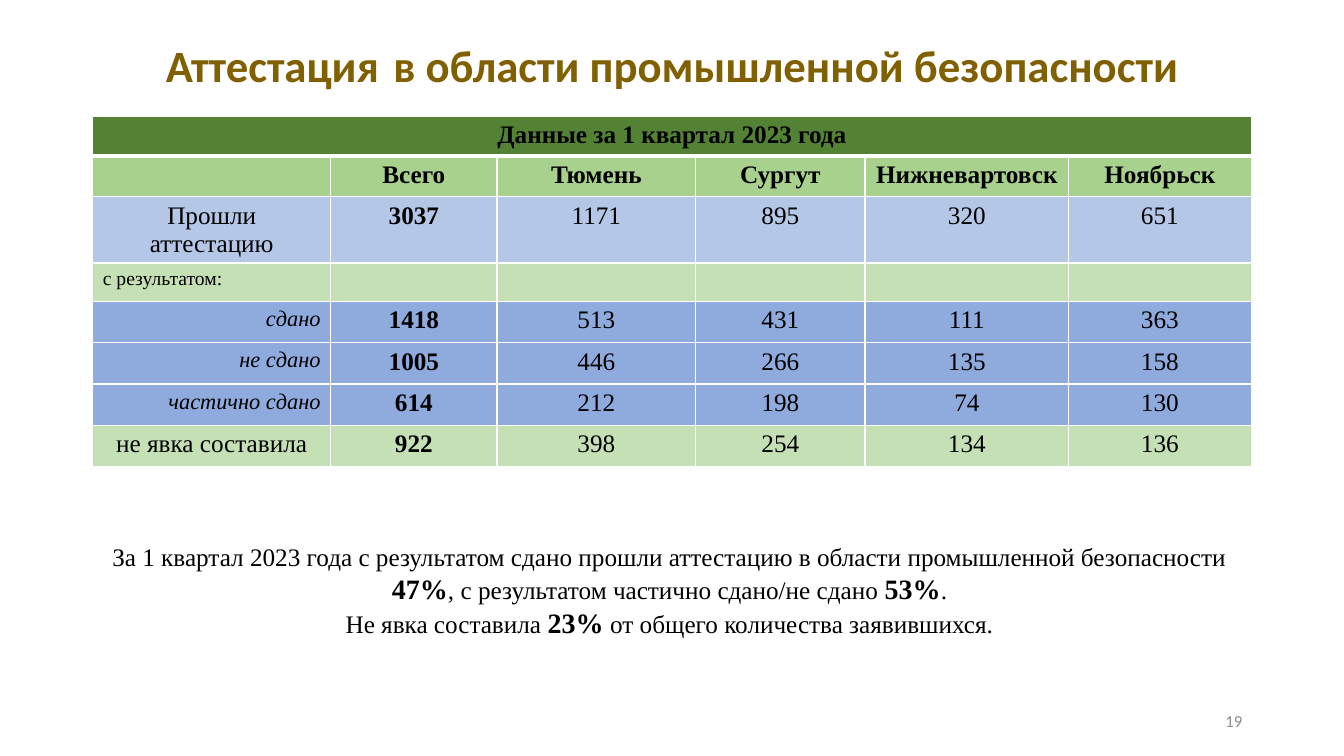
"""Build the slide with certification results for the first quarter of 2023."""
from lxml.etree import SubElement
from pptx import Presentation
from pptx.dml.color import RGBColor
from pptx.enum.text import MSO_ANCHOR, PP_ALIGN
from pptx.oxml.ns import qn
from pptx.util import Inches, Pt

COLORS = {
    "title": "806000", "text": "000000", "number": "8C8C8C", "border": "FFFFFF",
    "heading": "548235", "cities": "A9D18E", "total": "B4C7E7",
    "green": "C5E0B4", "result": "8FAADC",
}
SERIF = "Times New Roman"


def add_span(para, text, size, color="text", font=SERIF, bold=False, italic=False):
    span = para.add_run()
    span.text = text
    span.font.size = Pt(size)
    span.font.name = font
    span.font.bold = bold
    span.font.italic = italic
    span.font.color.rgb = RGBColor.from_string(COLORS[color])


def add_border(cell, side, width):
    line = SubElement(cell._tc.get_or_add_tcPr(), qn(f"a:{side}"), w=str(Pt(width)))
    fill = SubElement(line, qn("a:solidFill"))
    SubElement(fill, qn("a:srgbClr"), val=COLORS["border"])


deck = Presentation()
deck.slide_width = Inches(13.33)
deck.slide_height = Inches(7.5)
page = deck.slides.add_slide(deck.slide_layouts[5])

title = page.shapes.title
title.left, title.top = Inches(0.92), Inches(0.21)
title.width, title.height = Inches(11.5), Inches(0.83)
title.text_frame.word_wrap = True
title.text_frame.vertical_anchor = MSO_ANCHOR.MIDDLE
para = title.text_frame.paragraphs[0]
para.alignment = PP_ALIGN.CENTER
para.line_spacing = 0.9
add_span(para, "Аттестация", 32, "title", "Calibri", True)
add_span(para, " ", 44, "text", "Calibri", True)
add_span(para, "в области промышленной безопасности", 32, "title", "Calibri", True)

column_widths = [2.36, 1.65, 1.97, 1.68, 2.02, 1.81]
rows = [
    ("heading", 0.4, ["Данные за 1 квартал 2023 года", "", "", "", "", ""]),
    ("cities", 0.4, ["", "Всего", "Тюмень", "Сургут", "Нижневартовск", "Ноябрьск"]),
    ("total", 0.66, ["Прошли аттестацию", "3037", "1171", "895", "320", "651"]),
    ("green", 0.38, ["с результатом:", "", "", "", "", ""]),
    ("result", 0.41, ["сдано", "1418", "513", "431", "111", "363"]),
    ("result", 0.41, ["не сдано", "1005", "446", "266", "135", "158"]),
    ("result", 0.41, ["частично сдано", "614", "212", "198", "74", "130"]),
    ("green", 0.41, ["не явка составила", "922", "398", "254", "134", "136"]),
]
label_styles = {"с результатом:": (PP_ALIGN.LEFT, 14)}
table = page.shapes.add_table(
    len(rows), len(column_widths), Inches(0.92), Inches(1.15), Inches(11.5), Inches(3.48)
).table
for column, width in zip(table.columns, column_widths):
    column.width = Inches(width)
for row_index, (kind, height, texts) in enumerate(rows):
    table.rows[row_index].height = Inches(height)
    for column_index, text in enumerate(texts):
        cell = table.cell(row_index, column_index)
        add_border(cell, "lnL", 1)
        add_border(cell, "lnR", 1)
        add_border(cell, "lnT", 3 if row_index == 1 else 1)
        add_border(cell, "lnB", 3 if row_index == 0 else 1)
        cell.fill.solid()
        cell.fill.fore_color.rgb = RGBColor.from_string(COLORS[kind])
        para = cell.text_frame.paragraphs[0]
        if not text:
            SubElement(para._p, qn("a:endParaRPr"), sz="1400")
            continue
        italic = kind == "result" and column_index == 0
        default_style = (PP_ALIGN.RIGHT, 16) if italic else (PP_ALIGN.CENTER, 18)
        para.alignment, size = label_styles.get(text, default_style)
        bold = kind in ("heading", "cities") or column_index == 1
        add_span(para, text, size, bold=bold, italic=italic)
table.cell(0, 0).merge(table.cell(0, len(column_widths) - 1))

number_box = page.shapes.add_textbox(Inches(9.42), Inches(6.95), Inches(3), Inches(0.4))
number_box.text_frame.word_wrap = True
number_box.text_frame.vertical_anchor = MSO_ANCHOR.MIDDLE
para = number_box.text_frame.paragraphs[0]
para.alignment = PP_ALIGN.RIGHT
add_span(para, "19", 12, "number", "Calibri")

summary = [
    [
        "За 1 квартал 2023 года с результатом сдано прошли аттестацию "
        "в области промышленной безопасности ",
        "47%", ", с результатом частично сдано/не сдано ", "53%", ".",
    ],
    ["Не явка составила ", "23%", " от общего количества заявившихся."],
]
summary_box = page.shapes.add_textbox(Inches(0.89), Inches(5.32), Inches(11.5), Inches(1.08))
frame = summary_box.text_frame
frame.word_wrap = True
for index, pieces in enumerate(summary):
    para = frame.add_paragraph() if index else frame.paragraphs[0]
    para.alignment = PP_ALIGN.CENTER
    for piece in pieces:
        is_share = piece.endswith("%")
        add_span(para, piece, 20 if is_share else 18, bold=is_share)

deck.save("out.pptx")
